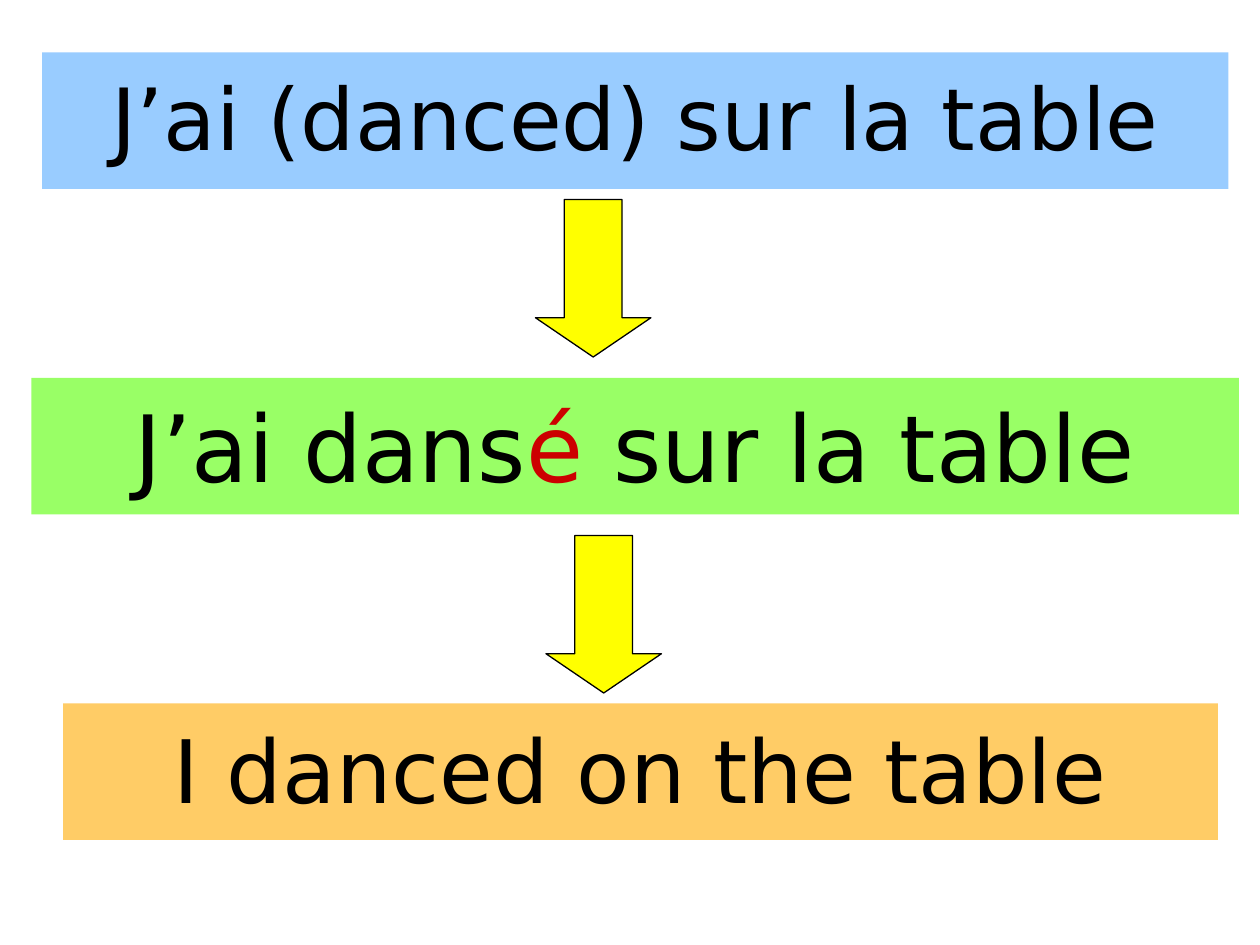
"""Build a slide that turns a half-English sentence into French and then English."""
import pptx
import pptx.dml.color
import pptx.enum.shapes
import pptx.enum.text
import pptx.util

Pt = pptx.util.Pt
theme = {
    "font": "DejaVu Sans",
    "ink": "000000",
    "accent": "CC0000",
    "arrow": "FFFF00",
    "mixed": ("99CCFF", 49),
    "french": ("99FF66", 53),
    "english": ("FFCC66", 50),
}
frame_format = {
    "word_wrap": True,
    "auto_size": pptx.enum.text.MSO_AUTO_SIZE.NONE,
    "vertical_anchor": pptx.enum.text.MSO_ANCHOR.TOP,
    "margin_top": Pt(7),
}
para_format = {"alignment": pptx.enum.text.PP_ALIGN.CENTER, "space_before": Pt(0)}


def apply_format(target, values):
    for name, value in values.items():
        setattr(target, name, value)


def paint(fill, color):
    fill.solid()
    fill.fore_color.rgb = pptx.dml.color.RGBColor.from_string(color)


deck = pptx.Presentation()
apply_format(deck, {"slide_width": Pt(720), "slide_height": Pt(540)})
slide = deck.slides.add_slide(deck.slide_layouts[0])
title, subtitle = slide.placeholders
title.element.getparent().remove(title.element)

sentences = [
    ("mixed", 24, 30, 678, [("J’ai (danced) sur la table", "ink")]),
    ("french", 18, 216, 690, [("J’ai dans", "ink"), ("é", "accent"), (" sur la table", "ink")]),
    ("english", 36, 402, 660, [("I danced on the table", "ink")]),
]
for style, left, top, width, pieces in sentences:
    color, size = theme[style]
    box = subtitle if style == "mixed" else slide.shapes.add_textbox(0, 0, 0, 0)
    apply_format(box, {"left": Pt(left), "top": Pt(top), "width": Pt(width), "height": Pt(78)})
    paint(box.fill, color)
    apply_format(box.text_frame, frame_format)
    para = box.text_frame.paragraphs[0]
    apply_format(para, para_format)
    for text, ink in pieces:
        span = para.add_run()
        span.text = text
        apply_format(span.font, {"name": theme["font"], "size": Pt(size)})
        paint(span.font.fill, theme[ink])

for left, top in [(306, 114), (312, 306)]:
    arrow = slide.shapes.add_shape(
        pptx.enum.shapes.MSO_SHAPE.DOWN_ARROW, Pt(left), Pt(top), Pt(66), Pt(90)
    )
    arrow.shadow.inherit = False
    arrow.adjustments[0] = 0.5
    arrow.adjustments[1] = 0.34
    paint(arrow.fill, theme["arrow"])
    paint(arrow.line.fill, theme["ink"])
    arrow.line.width = Pt(0.75)

deck.save("out.pptx")
